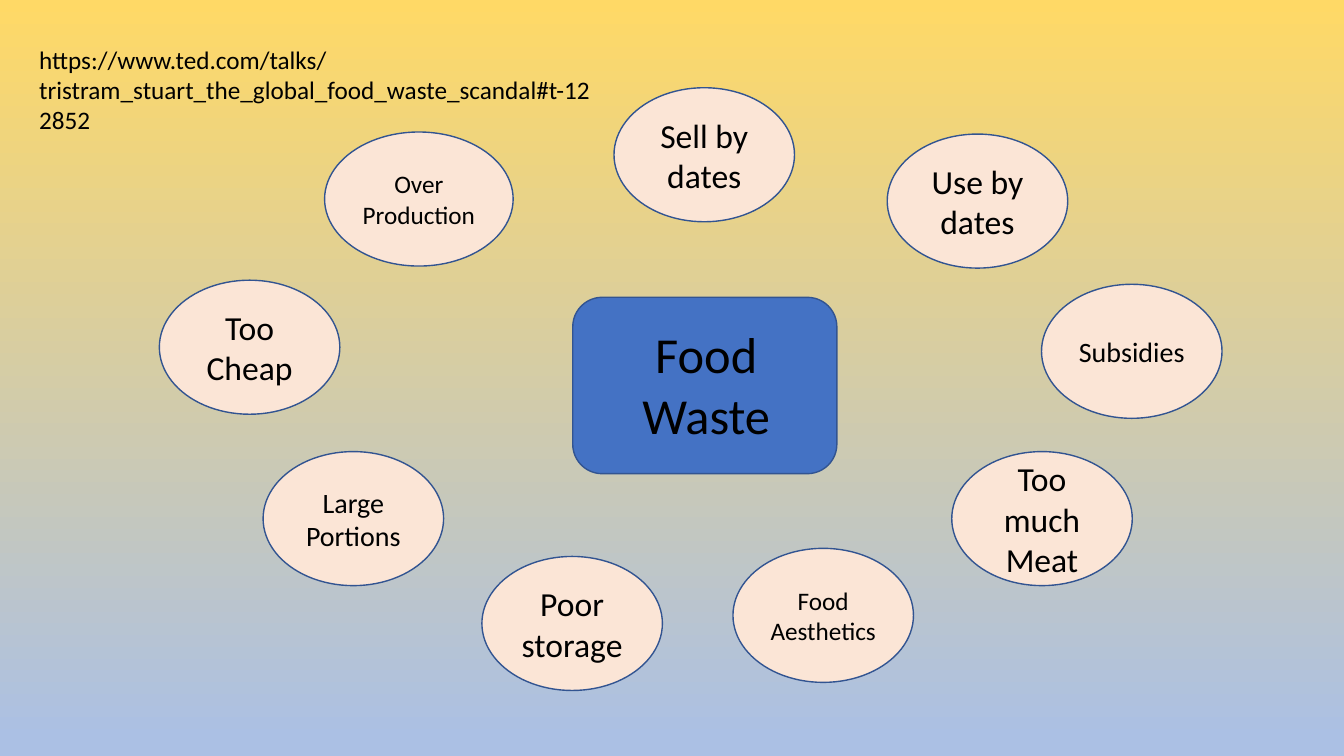
from pptx import Presentation
from pptx import util as u
from pptx.dml import color
from pptx.enum import shapes, text

SLIDE_WIDTH, SLIDE_HEIGHT = 13.33, 7.5
COLORS = {
    "sky_top": "FFD966",
    "sky_bottom": "ABC0E4",
    "hub": "4472C4",
    "bubble": "FBE5D6",
    "outline": "325491",
    "ink": "000000",
}

# Centres and sizes are percentages of the slide's width and height.
BUBBLE_SIZE = (13.43, 17.73)
WIDE_BUBBLE_SIZE = (14.03, 17.73)
CAUSES = [
    ("Over Production", (31.17, 26.33), WIDE_BUBBLE_SIZE, 18),
    ("Poor storage", (42.57, 82.47), BUBBLE_SIZE, 24),
    ("Large Portions", (26.29, 68.6), BUBBLE_SIZE, 20),
    ("Too much Meat", (77.53, 68.6), BUBBLE_SIZE, 24),
    ("Use by dates", (72.73, 26.6), BUBBLE_SIZE, 24),
    ("Sell by dates", (52.4, 20.47), BUBBLE_SIZE, 24),
    ("Food Aesthetics", (61.25, 81.4), BUBBLE_SIZE, 18),
    ("Too Cheap", (18.57, 45.93), BUBBLE_SIZE, 24),
    ("Subsidies", (84.21, 46.47), BUBBLE_SIZE, 20),
]
HUB = ((52.44, 51), (19.65, 23.33))
TOPIC = ("Food Waste", (52.55, 50.87), (15.53, 17.47), 36)
TALK_LINK = (
    "https://www.ted.com/talks/tristram_stuart_the_global_food_waste_scandal#t-122852",
    (23.48, 9.93), (42.61, 9.47), 18,
)


def rgb(name):
    return color.RGBColor.from_string(COLORS[name])


def box(centre, size):
    width, height = SLIDE_WIDTH * size[0] / 100, SLIDE_HEIGHT * size[1] / 100
    left = SLIDE_WIDTH * centre[0] / 100 - width / 2
    top = SLIDE_HEIGHT * centre[1] / 100 - height / 2
    return [u.Inches(length) for length in (left, top, width, height)]


def write(shape, wording, points, align, **frame_format):
    frame = shape.text_frame
    for name, value in {"word_wrap": True, **frame_format}.items():
        setattr(frame, name, value)
    paragraph = frame.paragraphs[0]
    paragraph.alignment = align
    run = paragraph.add_run()
    run.text = wording
    for name, value in {"name": "Calibri", "size": u.Pt(points)}.items():
        setattr(run.font, name, value)
    run.font.color.rgb = rgb("ink")


def add_outlined(slide, preset, centre, size, fill):
    shape = slide.shapes.add_shape(preset, *box(centre, size))
    shape.shadow.inherit = False
    shape.fill.solid()
    shape.fill.fore_color.rgb = rgb(fill)
    shape.line.color.rgb = rgb("outline")
    shape.line.width = u.Pt(1)
    return shape


def add_label(slide, wording, centre, size, points, align):
    label = slide.shapes.add_textbox(*box(centre, size))
    write(label, wording, points, align,
          auto_size=text.MSO_AUTO_SIZE.SHAPE_TO_FIT_TEXT)


def paint_background(slide):
    fill = slide.background.fill
    fill.gradient()
    fill.gradient_angle = 270
    stops = [("sky_top", 0), ("sky_bottom", 0.98)]
    for stop, (name, position) in zip(fill.gradient_stops, stops):
        stop.color.rgb = rgb(name)
        stop.position = position


def main():
    presentation = Presentation()
    presentation.slide_width = u.Inches(SLIDE_WIDTH)
    presentation.slide_height = u.Inches(SLIDE_HEIGHT)
    slide = presentation.slides.add_slide(presentation.slide_layouts[6])
    paint_background(slide)
    add_outlined(slide, shapes.MSO_SHAPE.ROUNDED_RECTANGLE, *HUB, "hub")
    add_label(slide, *TOPIC, text.PP_ALIGN.CENTER)
    for wording, centre, size, points in CAUSES:
        bubble = add_outlined(slide, shapes.MSO_SHAPE.OVAL, centre, size, "bubble")
        write(bubble, wording, points, text.PP_ALIGN.CENTER,
              vertical_anchor=text.MSO_ANCHOR.MIDDLE)
    add_label(slide, *TALK_LINK, text.PP_ALIGN.LEFT)
    presentation.save("out.pptx")


if __name__ == "__main__":
    main()
